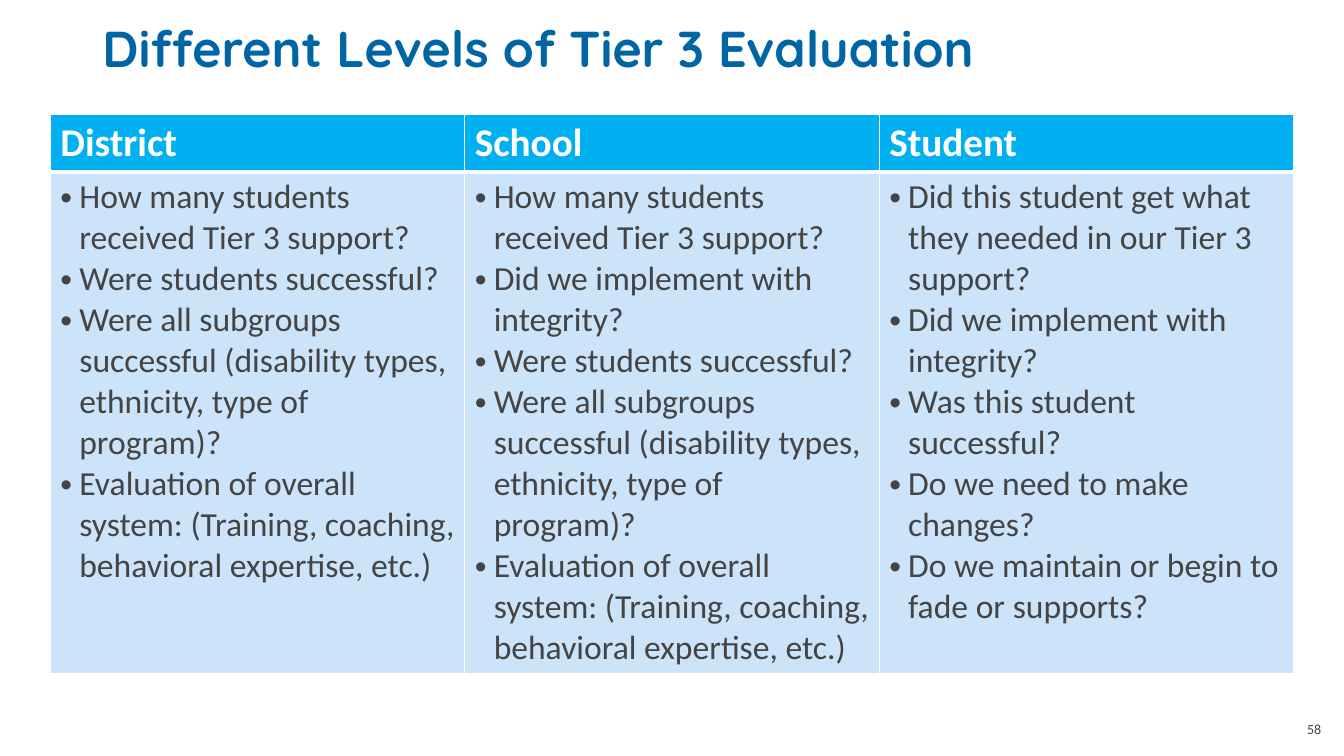
"""Build the slide comparing Tier 3 evaluation at district, school and student level."""
from lxml.etree import SubElement
from pptx import Presentation
from pptx.dml.color import RGBColor as RGB
from pptx.enum.text import MSO_ANCHOR as Anchor, MSO_AUTO_SIZE as AutoSize, PP_ALIGN as Align
from pptx.oxml.ns import qn
from pptx.util import Pt

COLORS = {"title": "0065A4", "header": "00B0F0", "body": "CCE4F9", "text": "444444", "white": "FFFFFF"}
BULLET_INDENT = Pt(13.5)

SUPPORT = "How many students received Tier 3 support?"
INTEGRITY = "Did we implement with integrity?"
SUCCESS = "Were students successful?"
SUBGROUPS = "Were all subgroups successful (disability types, ethnicity, type of program)?"
SYSTEM = "Evaluation of overall system: (Training, coaching, behavioral expertise, etc.)"
LEVELS = {
    "District": [SUPPORT, SUCCESS, SUBGROUPS, SYSTEM],
    "School": [SUPPORT, INTEGRITY, SUCCESS, SUBGROUPS, SYSTEM],
    "Student": [
        "Did this student get what they needed in our Tier 3 support?",
        INTEGRITY,
        "Was this student successful?",
        "Do we need to make changes?",
        "Do we maintain or begin to fade or supports?",
    ],
}


def style_font(paragraph, size, color, bold=False, name="Calibri"):
    font = paragraph.font
    font.name, font.size, font.bold = name, Pt(size), bold
    font.color.rgb = RGB.from_string(COLORS[color])


def style_cell(cell, fill, top, bottom):
    properties = cell._tc.get_or_add_tcPr()
    for side, width in (("L", 1), ("R", 1), ("T", top), ("B", bottom)):
        border = SubElement(properties, qn(f"a:ln{side}"), w=str(Pt(width)))
        SubElement(SubElement(border, qn("a:solidFill")), qn("a:srgbClr"), val=COLORS["white"])
    cell.fill.solid()
    cell.fill.fore_color.rgb = RGB.from_string(COLORS[fill])


prs = Presentation()
prs.slide_width, prs.slide_height = Pt(960), Pt(540)
slide = prs.slides.add_slide(prs.slide_layouts[5])

title = slide.shapes.title
title.left, title.top, title.width, title.height = Pt(66), Pt(8.6), Pt(828), Pt(104.4)
title.text_frame.text = "Different Levels of Tier 3 Evaluation"
title.text_frame.vertical_anchor = Anchor.TOP
heading = title.text_frame.paragraphs[0]
heading.alignment = Align.LEFT
style_font(heading, 36, "title", True, "Quicksand")

levels = slide.shapes.add_table(2, len(LEVELS), Pt(36), Pt(81.4), Pt(888), Pt(393.8)).table
levels.rows[0].height, levels.rows[1].height = Pt(41), Pt(352.8)

for column, (level, questions) in enumerate(LEVELS.items()):
    header, body = levels.cell(0, column), levels.cell(1, column)
    style_cell(header, "header", 1, 3)
    style_cell(body, "body", 3, 1)
    header.text = level
    style_font(header.text_frame.paragraphs[0], 28, "white", True)
    body.text = "\n".join(questions)
    for question in body.text_frame.paragraphs:
        properties = question._p.get_or_add_pPr()
        properties.set("marL", str(BULLET_INDENT))
        properties.set("indent", str(-BULLET_INDENT))
        SubElement(properties, qn("a:buFont"), typeface="Arial")
        SubElement(properties, qn("a:buChar"), char="•")
        style_font(question, 24, "text")

page_number = slide.shapes.add_textbox(Pt(926.6), Pt(511.2), Pt(26.6), Pt(19.4)).text_frame
page_number.word_wrap = False
page_number.auto_size = AutoSize.SHAPE_TO_FIT_TEXT
page_number.text = "58"
style_font(page_number.paragraphs[0], 10, "text")

prs.save("out.pptx")
